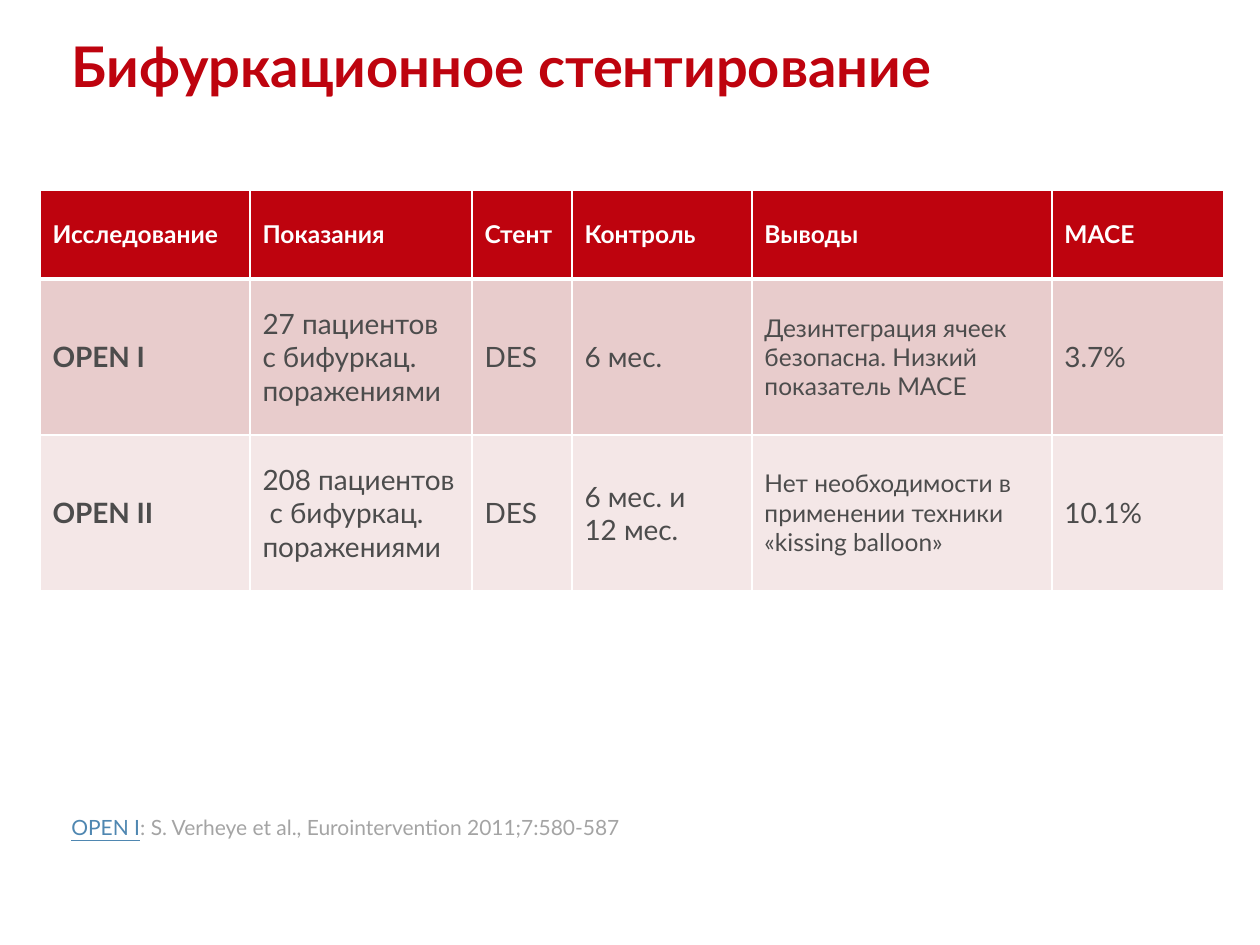
"""Build the bifurcation stenting slide with its study table."""
from lxml import etree
from pptx import Presentation
from pptx.dml.color import RGBColor
from pptx.enum.text import MSO_ANCHOR, MSO_AUTO_SIZE, PP_ALIGN
from pptx.oxml.ns import qn
from pptx.util import Emu, Pt

TOP, MIDDLE = MSO_ANCHOR.TOP, MSO_ANCHOR.MIDDLE
LEFT = PP_ALIGN.LEFT
NO_FIT = MSO_AUTO_SIZE.NONE
GROW = MSO_AUTO_SIZE.SHAPE_TO_FIT_TEXT
FONT = "Lato"
COLORS = {
    "red": "BE030E", "white": "FFFFFF", "text": "4C4C4C", "link": "4F87B1",
    "source": "A4A4A4", "rose": "E8CCCC", "pale": "F4E7E7",
}


def px(n):
    return Emu(round(n * 914400 / 126))


def add_run(p, text, size, color, bold=False, underline=False):
    r = p.add_run()
    r.text = text
    r.font.name = FONT
    r.font.size = Pt(size)
    r.font.bold = bold
    r.font.underline = underline
    r.font.color.rgb = RGBColor.from_string(COLORS[color])


prs = Presentation()
prs.slide_width, prs.slide_height = px(1260), px(945)
s = prs.slides.add_slide(prs.slide_layouts[5])

title = s.shapes.title
title.left, title.top, title.width, title.height = px(59), px(25), px(1201), px(110)
tf = title.text_frame
tf.auto_size = NO_FIT
tf.vertical_anchor = TOP
p = tf.paragraphs[0]
p.alignment = LEFT
add_run(p, "Бифуркационное стентирование", 32, "red", bold=True)

rows = [
    ["Исследование", "Показания", "Стент", "Контроль", "Выводы", "MACE"],
    ["OPEN I", "27 пациентов  с бифуркац. поражениями", "DES", "6 мес.",
     "Дезинтеграция ячеек безопасна. Низкий показатель MACE", "3.7%"],
    ["OPEN II", "208 пациентов  с бифуркац. поражениями", "DES", "6 мес. и\n12 мес.",
     "Нет необходимости в применении техники «kissing balloon»", "10.1%"],
]
widths = [210, 222, 100, 180, 300, 172]
heights = [89, 156, 156]
fills = ["red", "rose", "pale"]
conclusions = 4

table = s.shapes.add_table(len(rows), len(widths), px(40), px(190),
                           px(sum(widths)), px(sum(heights))).table
for column, width in zip(table.columns, widths):
    column.width = px(width)
for row, height in zip(table.rows, heights):
    row.height = px(height)

for i, row in enumerate(rows):
    for j, text in enumerate(row):
        cell = table.cell(i, j)
        cell.vertical_anchor = MIDDLE
        tcPr = cell._tc.get_or_add_tcPr()
        for side in ("lnL", "lnR", "lnT", "lnB"):
            heavy = (i, side) in ((0, "lnB"), (1, "lnT"))
            ln = etree.SubElement(tcPr, qn(f"a:{side}"), w=str(Pt(3 if heavy else 1)))
            fill = etree.SubElement(ln, qn("a:solidFill"))
            etree.SubElement(fill, qn("a:srgbClr"), val=COLORS["white"])
        cell.fill.solid()
        cell.fill.fore_color.rgb = RGBColor.from_string(COLORS[fills[i]])
        tf = cell.text_frame
        for k, line in enumerate(text.split("\n")):
            p = tf.add_paragraph() if k else tf.paragraphs[0]
            add_run(p, line, 14 if i == 0 or j == conclusions else 16,
                    "text" if i else "white", bold=i == 0 or j == 0)

tf = s.shapes.add_textbox(px(59), px(808), px(903), px(38)).text_frame
tf.word_wrap = True
tf.auto_size = GROW
p = tf.paragraphs[0]
pPr = p._p.get_or_add_pPr()
pPr.set("marL", str(px(32)))
pPr.set("indent", str(px(-32)))
add_run(p, "OPEN I", 12, "link", underline=True)
add_run(p, ": S. Verheye et al., Eurointervention 2011;7:580-587", 12, "source")

prs.save("out.pptx")
